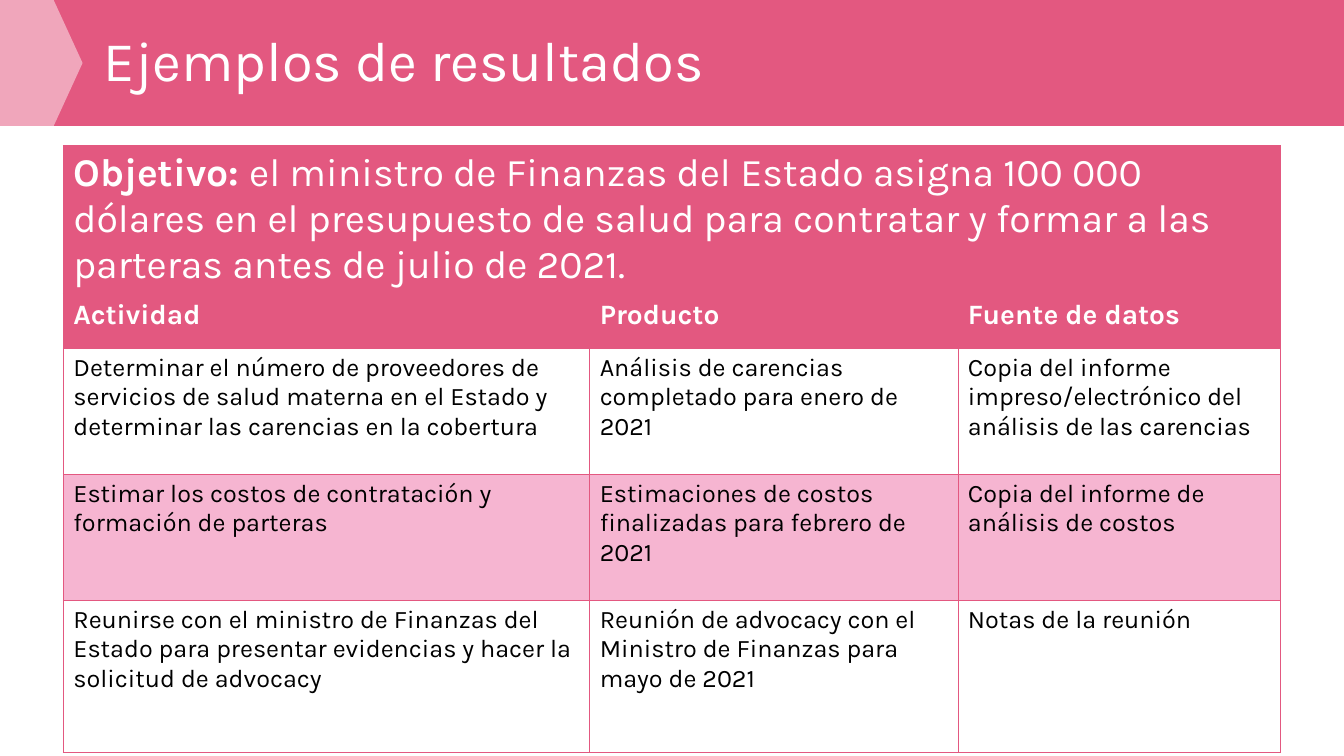
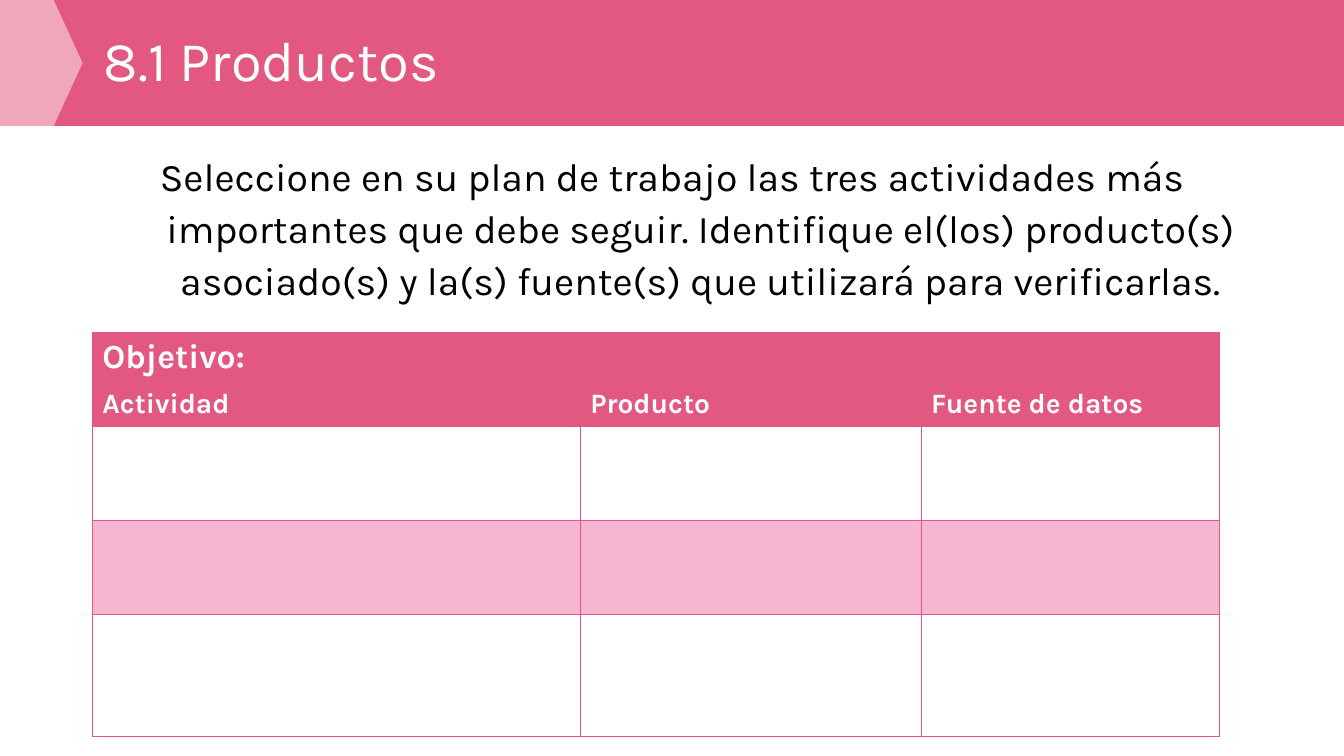
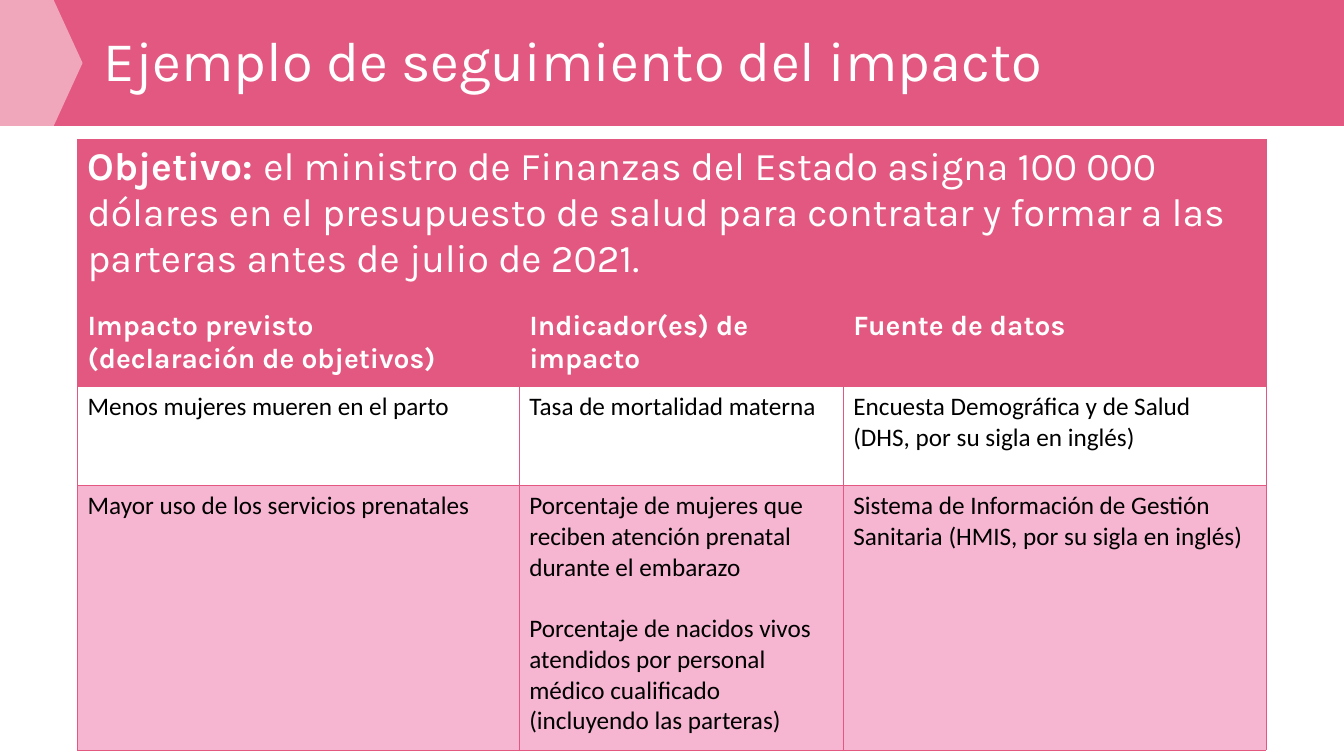
from dataclasses import dataclass

from lxml import etree
from pptx import Presentation
from pptx.dml.color import RGBColor
from pptx.enum import shapes, text
from pptx.oxml import ns
from pptx.util import Pt

PINK = RGBColor(0xE3, 0x58, 0x80)
PALE_PINK = RGBColor(0xF6, 0xB5, 0xD1)
WHITE = RGBColor(0xFF, 0xFF, 0xFF)
BLACK = RGBColor(0x00, 0x00, 0x00)
KARLA = "Karla"
CALIBRI = "Calibri"
BAND_HEIGHT = 90
PARAGRAPH_GAP = 22


@dataclass(frozen=True)
class Style:
    size: float
    color: RGBColor
    font: str = KARLA
    bold: bool = False


@dataclass(frozen=True)
class Plan:
    left: float
    top: float
    widths: tuple[float, ...]
    heights: tuple[float, ...]
    objective: str
    objective_size: float
    headings: tuple[str, ...]
    rows: tuple[tuple[str, ...], ...]
    body_font: str = KARLA


@dataclass(frozen=True)
class Page:
    title: str
    plan: Plan
    instruction: str = ""


OBJECTIVE = (
    "el ministro de Finanzas del Estado asigna 100 000 dólares en el presupuesto de salud "
    "para contratar y formar a las parteras antes de julio de 2021."
)
OUTPUT_HEADINGS = ("Actividad", "Producto", "Fuente de datos")

PAGES = (
    Page(
        "Ejemplos de resultados",
        Plan(
            45.2, 104, (376, 263, 230), (105, 39, 90, 90, 109), OBJECTIVE, 28, OUTPUT_HEADINGS,
            (
                (
                    "Determinar el número de proveedores de servicios de salud materna en el Estado "
                    "y determinar las carencias en la cobertura",
                    "Análisis de carencias completado para enero de 2021",
                    "Copia del informe impreso/electrónico del análisis de las carencias",
                ),
                (
                    "Estimar los costos de contratación y formación de parteras",
                    "Estimaciones de costos finalizadas para febrero de 2021",
                    "Copia del informe de análisis de costos",
                ),
                (
                    "Reunirse con el ministro de Finanzas del Estado para presentar evidencias "
                    "y hacer la solicitud de advocacy",
                    "Reunión de advocacy con el Ministro de Finanzas para mayo de 2021",
                    "Notas de la reunión",
                ),
            ),
        ),
    ),
    Page(
        "8.1 Productos",
        Plan(
            66, 237.5, (348.5, 243.5, 213), (35.5, 31, 67, 67, 87), "", 24, OUTPUT_HEADINGS,
            (("", "", ""),) * 3,
        ),
        "Seleccione en su plan de trabajo las tres actividades más importantes que debe seguir. "
        "Identifique el(los) producto(s) asociado(s) y la(s) fuente(s) que utilizará para verificarlas.",
    ),
    Page(
        "Ejemplo de seguimiento del impacto",
        Plan(
            55.4, 99.8, (315.5, 231.5, 302), (118, 58.5, 70.5, 189), OBJECTIVE, 28,
            (
                "Impacto previsto\n(declaración de objetivos)",
                "Indicador(es) de impacto",
                "Fuente de datos",
            ),
            (
                (
                    "Menos mujeres mueren en el parto",
                    "Tasa de mortalidad materna",
                    "Encuesta Demográfica y de Salud\n(DHS, por su sigla en inglés)",
                ),
                (
                    "Mayor uso de los servicios prenatales",
                    "Porcentaje de mujeres que reciben atención prenatal durante el embarazo\n\n"
                    "Porcentaje de nacidos vivos atendidos por personal médico cualificado "
                    "(incluyendo las parteras)",
                    "Sistema de Información de Gestión Sanitaria (HMIS, por su sigla en inglés)",
                ),
            ),
            CALIBRI,
        ),
    ),
)


def add_run(paragraph, words: str, style: Style) -> None:
    run = paragraph.add_run()
    run.text = words
    run.font.name = style.font
    run.font.size = Pt(style.size)
    run.font.bold = style.bold
    run.font.color.rgb = style.color


def add_band(slide, preset, width: float, color: RGBColor):
    band = slide.shapes.add_shape(preset, 0, 0, Pt(width), Pt(BAND_HEIGHT))
    band.shadow.inherit = False
    band.fill.solid()
    band.fill.fore_color.rgb = color
    band.line.fill.background()
    return band


def move_bands_to_layout(slide, layout) -> None:
    header = add_band(slide, shapes.MSO_SHAPE.RECTANGLE, 960, PINK)
    arrow = add_band(slide, shapes.MSO_SHAPE.PENTAGON, 59, WHITE)
    arrow.adjustments[0] = 0.35
    white = arrow.element.find(".//" + ns.qn("a:srgbClr"))
    etree.SubElement(white, ns.qn("a:alpha"), val="47000")
    for position, band in enumerate((header, arrow), start=2):
        layout.shapes.element.insert(position, band.element)


def write_title(slide, words: str) -> None:
    title = slide.shapes.title
    title.left, title.top, title.width, title.height = Pt(67), Pt(14.4), Pt(762), Pt(62)
    frame = title.text_frame
    frame.vertical_anchor = text.MSO_ANCHOR.MIDDLE
    heading = frame.paragraphs[0]
    heading.alignment = text.PP_ALIGN.LEFT
    heading.line_spacing = 0.9
    add_run(heading, words, Style(40, WHITE))


def add_instruction(slide, words: str) -> None:
    frame = slide.shapes.add_textbox(Pt(66), Pt(102), Pt(828), Pt(130)).text_frame
    frame.word_wrap = True
    instruction = frame.paragraphs[0]
    instruction.alignment = text.PP_ALIGN.CENTER
    instruction.line_spacing = 1.1
    instruction.space_before = Pt(10)
    indents = instruction._p.get_or_add_pPr()
    indents.set("marL", str(Pt(40.5)))
    indents.set("indent", str(-Pt(40.5)))
    add_run(instruction, words, Style(28, BLACK))


def format_cell(cell, color: RGBColor) -> None:
    cell.fill.solid()
    cell.fill.fore_color.rgb = color
    properties = cell._tc.get_or_add_tcPr()
    for position, side in enumerate(("lnL", "lnR", "lnT", "lnB")):
        border = etree.Element(ns.qn(f"a:{side}"), w=str(Pt(0.5)))
        fill = etree.SubElement(border, ns.qn("a:solidFill"))
        etree.SubElement(fill, ns.qn("a:srgbClr"), val=str(PINK))
        properties.insert(position, border)


def write_cell(cell, words: str, style: Style) -> None:
    for block_number, block in enumerate(words.split("\n\n")):
        for line_number, line in enumerate(block.split("\n")):
            first = block_number == line_number == 0
            frame = cell.text_frame
            paragraph = frame.paragraphs[0] if first else frame.add_paragraph()
            if block_number and not line_number:
                paragraph.space_before = Pt(PARAGRAPH_GAP)
            if line:
                add_run(paragraph, line, style)


def add_plan(slide, plan: Plan) -> None:
    table = slide.shapes.add_table(
        len(plan.heights), len(plan.widths), Pt(plan.left), Pt(plan.top),
        Pt(sum(plan.widths)), Pt(sum(plan.heights)),
    ).table
    for column, width in zip(table.columns, plan.widths):
        column.width = Pt(width)
    for number, (row, height) in enumerate(zip(table.rows, plan.heights)):
        row.height = Pt(height)
        color = PINK if number < 2 else (WHITE, PALE_PINK)[number % 2]
        for cell in row.cells:
            format_cell(cell, color)

    objective = table.cell(0, 0)
    objective.merge(table.cell(0, len(plan.widths) - 1))
    paragraph = objective.text_frame.paragraphs[0]
    label = "Objetivo: " if plan.objective else "Objetivo:"
    add_run(paragraph, label, Style(plan.objective_size, WHITE, bold=True))
    if plan.objective:
        add_run(paragraph, plan.objective, Style(plan.objective_size, WHITE))

    heading_style = Style(20, WHITE, bold=True)
    body_style = Style(18, BLACK, plan.body_font)
    for number, entries in enumerate((plan.headings, *plan.rows), start=1):
        style = heading_style if number == 1 else body_style
        for column, words in enumerate(entries):
            write_cell(table.cell(number, column), words, style)


def main() -> None:
    deck = Presentation()
    deck.slide_width, deck.slide_height = Pt(960), Pt(540)
    layout = deck.slide_layouts[5]
    for number, page in enumerate(PAGES):
        slide = deck.slides.add_slide(layout)
        if number == 0:
            move_bands_to_layout(slide, layout)
        write_title(slide, page.title)
        if page.instruction:
            add_instruction(slide, page.instruction)
        add_plan(slide, page.plan)
    deck.save("out.pptx")


if __name__ == "__main__":
    main()
